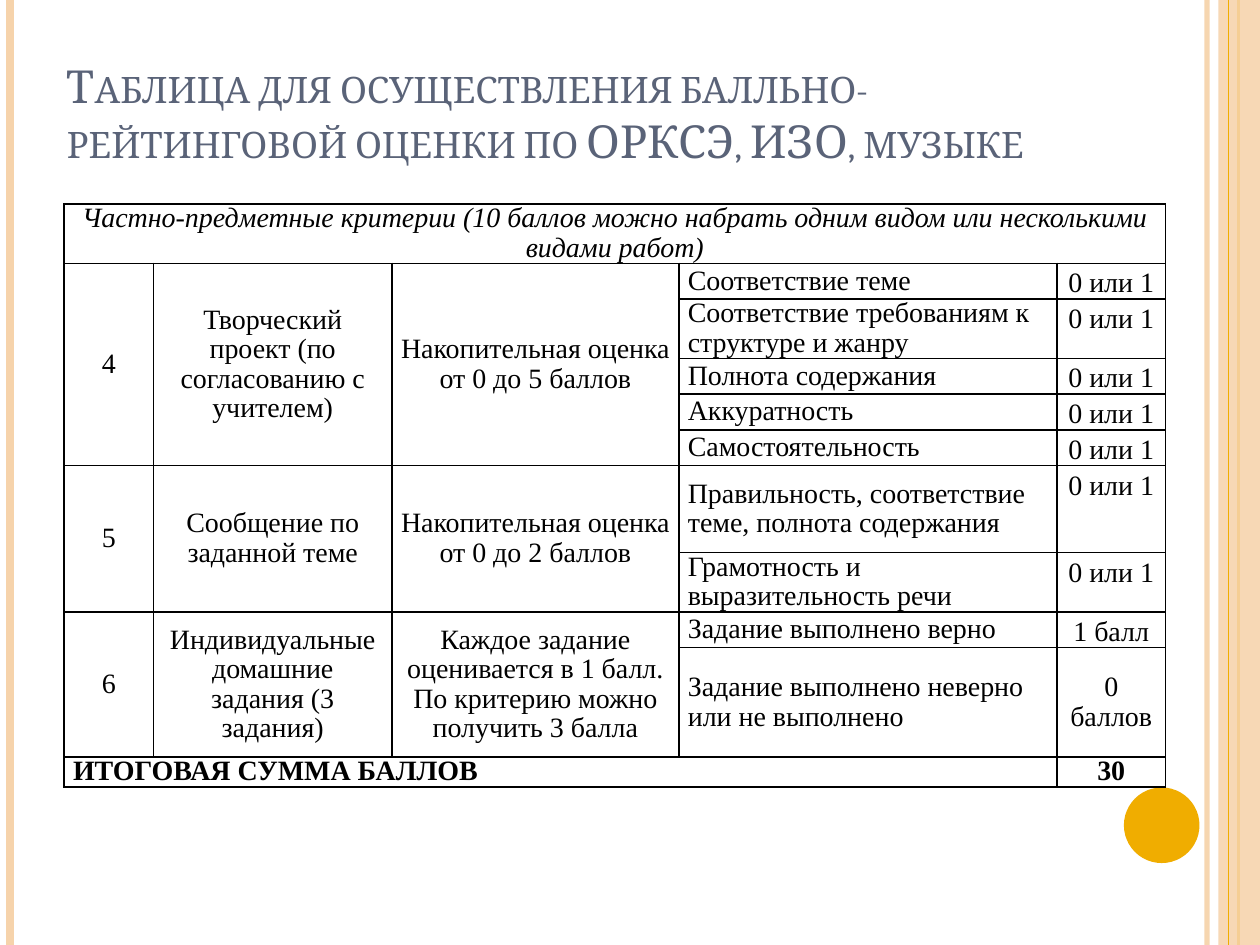
"""Build a slide with a grading table for school subjects."""
from typing import NamedTuple

from lxml import etree
from pptx import Presentation
from pptx.dml.color import RGBColor
from pptx.enum import shapes, text
from pptx.oxml.ns import qn
from pptx.util import Inches, Pt

COLORS = {"peach": "F6D3AB", "amber": "F0AD00", "title": "5A6378", "ink": "000000"}
COLS = [0.71, 1.89, 2.28, 3, 0.86]
ROWS = [0.47, 0.28, 0.47, 0.28, 0.28, 0.28, 0.69, 0.46, 0.28, 0.87, 0.23]
CENTER, LEFT = text.PP_ALIGN.CENTER, text.PP_ALIGN.LEFT
TOP, MIDDLE = text.MSO_ANCHOR.TOP, text.MSO_ANCHOR.MIDDLE
SCORE = "0 или 1"


class Stripe(NamedTuple):
    x: float
    color: str
    width: float
    alpha: int = 100


class Section(NamedTuple):
    number: str
    work: str
    rule: str
    criteria: list[tuple[str, str]]


BACK_STRIPES = [Stripe(9.58, "peach", 3, 93), Stripe(0.08, "peach", 4.5),
                Stripe(9.83, "amber", 1.5)]
FRONT_STRIPE = Stripe(9.75, "amber", 0.75)

SECTIONS = [
    Section("4", "Творческий проект (по согласованию с учителем)",
            "Накопительная оценка\nот 0 до 5 баллов",
            [("Соответствие теме", SCORE),
             ("Соответствие требованиям к структуре и жанру", SCORE),
             ("Полнота содержания", SCORE),
             ("Аккуратность", SCORE),
             ("Самостоятельность", SCORE)]),
    Section("5", "Сообщение по заданной теме",
            "Накопительная оценка\nот 0 до 2 баллов",
            [("Правильность, соответствие теме, полнота содержания", SCORE),
             ("Грамотность и выразительность речи", SCORE)]),
    Section("6", "Индивидуальные домашние задания (3 задания)",
            "Каждое задание оценивается в 1 балл. По критерию можно получить 3 балла",
            [("Задание выполнено верно", "1 балл"),
             ("Задание выполнено неверно или не выполнено", "0 баллов")]),
]


def rgb(name: str) -> RGBColor:
    return RGBColor.from_string(COLORS[name])


def set_alpha(sp, percent: int) -> None:
    if percent < 100:
        clr = next(sp._element.spPr.iter(qn("a:srgbClr")))
        etree.SubElement(clr, qn("a:alpha"), val=str(percent * 1000))


def add_stripe(s, stripe: Stripe) -> None:
    x = Inches(stripe.x)
    ln = s.shapes.add_connector(shapes.MSO_CONNECTOR.STRAIGHT, x, 0, x, Inches(7.5))
    ln.line.color.rgb = rgb(stripe.color)
    ln.line.width = Pt(stripe.width)
    set_alpha(ln, stripe.alpha)
    etree.SubElement(ln._element.spPr, qn("a:effectLst"))


def add_plain(s, kind, box: tuple, color: str, alpha: int = 100) -> None:
    sp = s.shapes.add_shape(kind, *map(Inches, box))
    sp.shadow.inherit = False
    sp.fill.solid()
    sp.fill.fore_color.rgb = rgb(color)
    sp.line.fill.background()
    set_alpha(sp, alpha)


def write(tf, content: str, *, size=16, font="Times New Roman", color="ink",
          align=CENTER, spacing=0.95, bold=False, italic=False, caps=False) -> None:
    tf.text = content
    for p in tf.paragraphs:
        p.alignment, p.line_spacing = align, spacing
        for r in p.runs:
            f = r.font
            f.size, f.name, f.bold, f.italic = Pt(size), font, bold, italic
            f.color.rgb = rgb(color)
            if caps:
                r._r.get_or_add_rPr().set("cap", "small")


def border(cell) -> None:
    tcPr = cell._tc.get_or_add_tcPr()
    for i, side in enumerate(("lnL", "lnR", "lnT", "lnB")):
        ln = etree.Element(qn(f"a:{side}"), w=str(Pt(1)))
        fill = etree.SubElement(ln, qn("a:solidFill"))
        etree.SubElement(fill, qn("a:srgbClr"), val=COLORS["ink"])
        tcPr.insert(i, ln)


def fill_cell(tbl, row: int, col: int, content: str, *, rows=1, cols=1,
              anchor=MIDDLE, **fmt) -> None:
    cell = tbl.cell(row, col)
    if rows * cols > 1:
        cell.merge(tbl.cell(row + rows - 1, col + cols - 1))
    cell.vertical_anchor = anchor
    write(cell.text_frame, content, **fmt)


def add_grades(s) -> None:
    tbl = s.shapes.add_table(len(ROWS), len(COLS), Inches(0.51), Inches(1.62),
                             Inches(sum(COLS)), Inches(sum(ROWS))).table
    tbl.first_row = tbl.horz_banding = False
    for column, width in zip(tbl.columns, COLS):
        column.width = Inches(width)
    for row, height in zip(tbl.rows, ROWS):
        row.height = Inches(height)
    for cell in tbl.iter_cells():
        cell.margin_left = cell.margin_right = Inches(0.07)
        cell.margin_top = cell.margin_bottom = 0
        cell.fill.background()
        border(cell)
    fill_cell(tbl, 0, 0, "Частно-предметные критерии (10 баллов можно набрать "
              "одним видом или несколькими видами работ)", cols=5, italic=True)
    row = 1
    for sec in SECTIONS:
        for col, content in enumerate((sec.number, sec.work, sec.rule)):
            fill_cell(tbl, row, col, content, rows=len(sec.criteria))
        for criterion, score in sec.criteria:
            fill_cell(tbl, row, 3, criterion, align=LEFT)
            if score == "0 баллов":
                fill_cell(tbl, row, 4, score)
            else:
                fill_cell(tbl, row, 4, score, anchor=TOP, spacing=1.15)
            row += 1
    fill_cell(tbl, row, 0, "ИТОГОВАЯ СУММА БАЛЛОВ", cols=4, align=LEFT, bold=True)
    fill_cell(tbl, row, 4, "30", bold=True)


def main() -> None:
    prs = Presentation()
    prs.slide_width, prs.slide_height = Inches(10), Inches(7.5)
    s = prs.slides.add_slide(prs.slide_layouts[5])
    for stripe in BACK_STRIPES:
        add_stripe(s, stripe)
    add_plain(s, shapes.MSO_SHAPE.RECTANGLE, (9.67, 0, 0.33, 7.5), "peach", 87)
    add_stripe(s, FRONT_STRIPE)
    add_plain(s, shapes.MSO_SHAPE.OVAL, (8.92, 6.25, 0.6, 0.6), "amber")
    title = s.shapes.title
    title.left, title.top, title.width, title.height = map(Inches, (0.43, 0.13, 8.75, 1.25))
    tf = title.text_frame
    tf.auto_size, tf.word_wrap = text.MSO_AUTO_SIZE.NONE, True
    tf.vertical_anchor = text.MSO_ANCHOR.BOTTOM
    write(tf, "Таблица для осуществления балльно-рейтинговой оценки по ОРКСЭ, ИЗО, музыке",
          size=26, font="Cambria", color="title", align=LEFT, spacing=1.0, caps=True)
    add_grades(s)
    prs.save("out.pptx")


if __name__ == "__main__":
    main()
